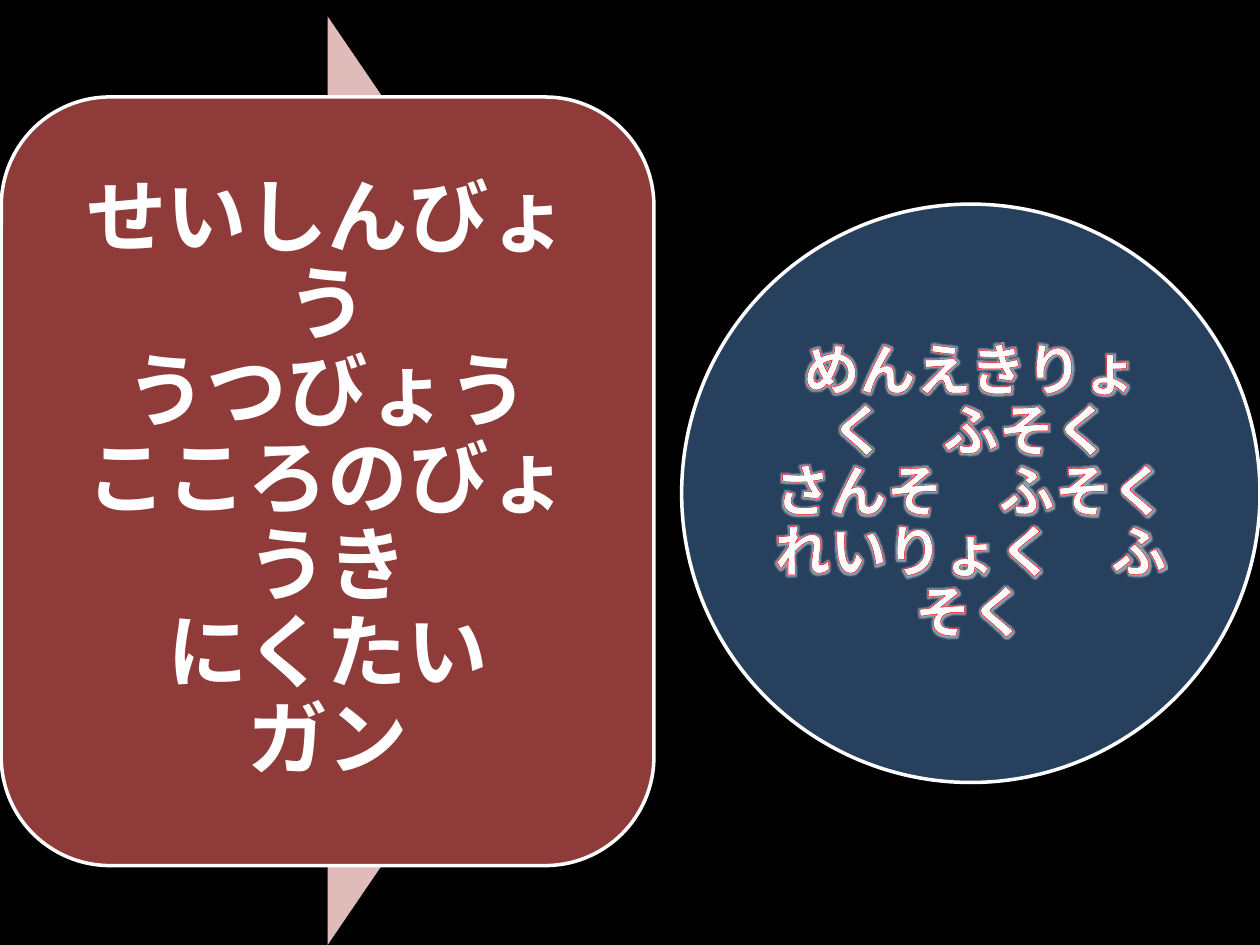
from lxml import etree
from pptx import Presentation
from pptx.dml.color import RGBColor
from pptx.enum.shapes import MSO_SHAPE
from pptx.enum.text import MSO_ANCHOR, PP_ALIGN
from pptx.oxml import parse_xml
from pptx.oxml.ns import nsdecls, qn
from pptx.util import Inches, Pt

ARROW, ROUNDED, ELLIPSE = MSO_SHAPE.RIGHT_ARROW, MSO_SHAPE.ROUNDED_RECTANGLE, MSO_SHAPE.OVAL
MIDDLE, CENTER = MSO_ANCHOR.MIDDLE, PP_ALIGN.CENTER
BLACK = RGBColor(0x00, 0x00, 0x00)
WHITE = RGBColor(0xFF, 0xFF, 0xFF)
PINK = RGBColor(0xDF, 0xBB, 0xBA)
DARK_RED = RGBColor(0x8E, 0x3B, 0x39)
BLUE = RGBColor(0x4F, 0x81, 0xBD)
RED = RGBColor(0xFF, 0x00, 0x00)
FONT = "Noto Sans CJK KR"

prs = Presentation()
prs.slide_width, prs.slide_height = Inches(10), Inches(7.5)
slide = prs.slides.add_slide(prs.slide_layouts[6])
slide.background.fill.solid()
slide.background.fill.fore_color.rgb = BLACK


def add_filled(kind, box, color):
    shape = slide.shapes.add_shape(kind, *[Inches(v) for v in box])
    shape.shadow.inherit = False
    shape.fill.solid()
    shape.fill.fore_color.rgb = color
    shape.line.fill.background()
    return shape


def add_labelled(kind, box, color, lines, size, inset):
    """Add a white-edged shape with centred bold lines; return it and its runs."""
    shape = add_filled(kind, box, color)
    shape.line.color.rgb = WHITE
    shape.line.width = Pt(2)
    frame = shape.text_frame
    frame.word_wrap = True
    frame.vertical_anchor = MIDDLE
    frame.margin_left = frame.margin_right = Inches(inset)
    frame.margin_top = frame.margin_bottom = Inches(inset)
    paragraph = frame.paragraphs[0]
    paragraph.text = "\v".join(lines)
    paragraph.alignment = CENTER
    paragraph.line_spacing = 0.9
    for run in paragraph.runs:
        run.font.size = Pt(size)
        run.font.bold = True
        run.font.color.rgb = WHITE
        run.font.name = FONT
        east_asian = etree.SubElement(run.font._element, qn("a:ea"))
        east_asian.set("typeface", FONT)
    return shape, paragraph.runs


add_filled(ARROW, (0.09, 0.13, 5.02, 7.37), PINK)

add_labelled(
    ROUNDED, (0.01, 0.77, 5.18, 6.1), DARK_RED,
    ["せいしんびょう", "うつびょう", "こころのびょうき", "にくたい", "ガン"], 46, 0.19)

causes, cause_runs = add_labelled(
    ELLIPSE, (5.41, 1.62, 4.59, 4.59), BLUE,
    ["めんえきりょく　ふそく", "さんそ　ふそく", "れいりょく　ふそく"], 32, 0)

# Half-transparent circle; red outline and soft white glow on its letters
fill_color = causes._element.spPr.find(qn("a:solidFill"))[0]
etree.SubElement(fill_color, qn("a:alpha")).set("val", "50000")
for run in cause_runs:
    properties = run.font._element
    properties.insert(0, parse_xml(
        f'<a:ln {nsdecls("a")} w="{Pt(0.75)}"><a:solidFill>'
        f'<a:srgbClr val="{RED}"/></a:solidFill></a:ln>'))
    properties.find(qn("a:solidFill")).addnext(parse_xml(
        f'<a:effectLst {nsdecls("a")}><a:glow rad="{Pt(3.5)}">'
        f'<a:srgbClr val="{WHITE}"><a:alpha val="50000"/></a:srgbClr>'
        '</a:glow></a:effectLst>'))

prs.save("out.pptx")
